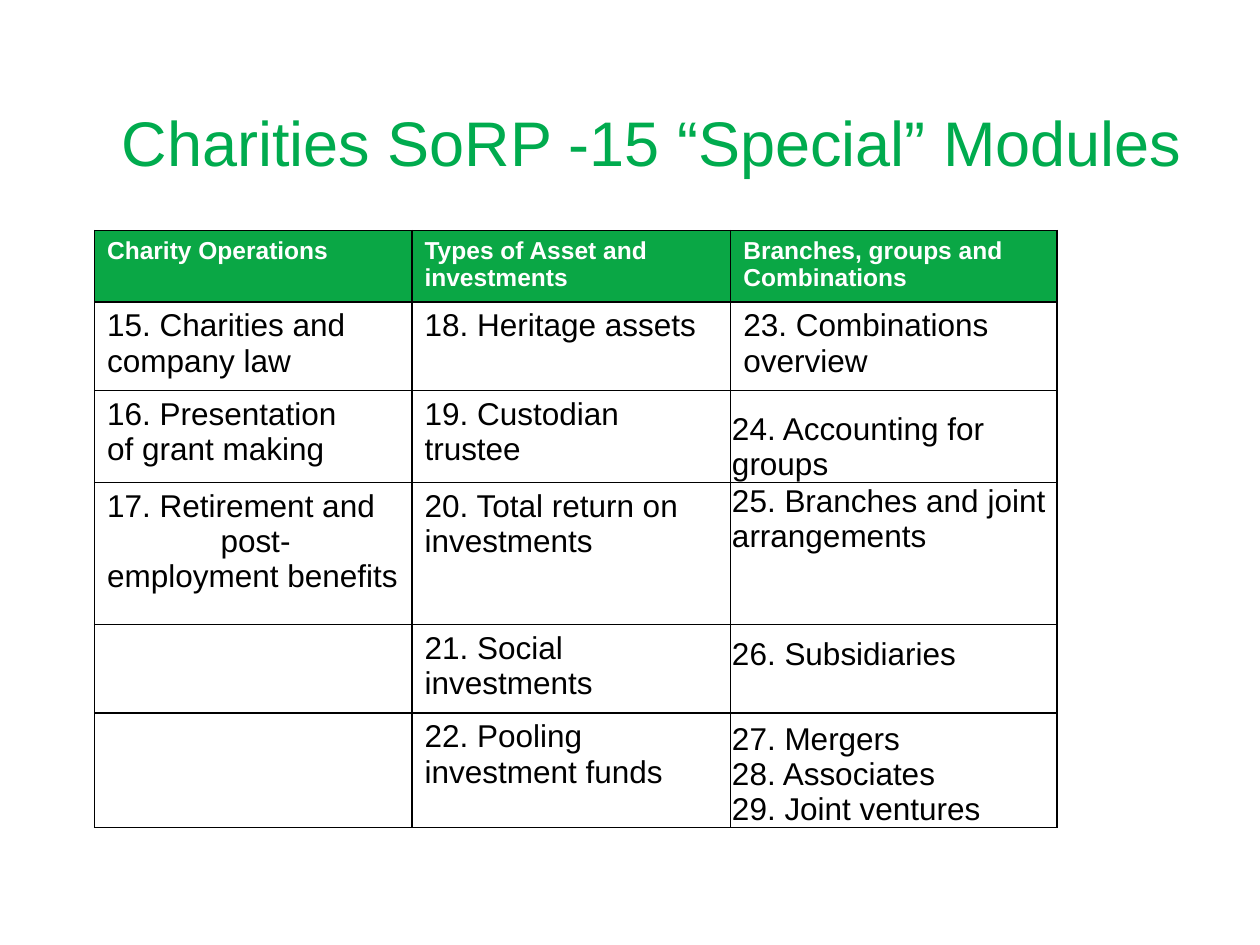
"""Build the slide on the special modules of the Charities SoRP."""
from dataclasses import dataclass

import lxml.etree
import pptx
import pptx.dml.color
import pptx.enum.text
import pptx.oxml.ns
import pptx.util

ANCHOR = pptx.enum.text.MSO_ANCHOR


@dataclass(frozen=True)
class Theme:
    font: str = "Arial"
    title_color: str = "00AB4E"
    header_fill: str = "0AA745"
    white: str = "FFFFFF"
    black: str = "000000"
    title_size: int = 36
    header_size: int = 14
    body_size: int = 18
    border_width: int = 1


@dataclass(frozen=True)
class Area:
    left: float
    top: float
    width: float
    height: float


@dataclass(frozen=True)
class Padding:
    side: float = 0.1
    top: float = 0.05
    bottom: float = 0.05


@dataclass(frozen=True)
class Module:
    text: str = ""
    padding: Padding = Padding()
    anchor: ANCHOR = ANCHOR.TOP
    indents: tuple[float, ...] = ()


THEME = Theme()
SLIDE_WIDTH, SLIDE_HEIGHT = pptx.util.Inches(10), pptx.util.Inches(7.5)
TITLE_AREA = Area(0.087, 0.041, 0.9, 0.216)
TABLE_AREA = Area(0.075, 0.244, 0.764, 0.612)
COLUMN_WIDTHS = (2.52, 2.53, 2.59)
ROW_HEIGHTS = (0.54, 0.68, 0.73, 1.13, 0.66, 0.85)
TIGHT = Padding(0.01, 0.01, 0)
LOWERED = Padding(0.01, 0.1, 0)

ROWS = (
    (Module("Charity Operations"), Module("Types of Asset and investments"),
     Module("Branches, groups and Combinations")),
    (Module("15. Charities and\ncompany law"), Module("18. Heritage assets"),
     Module("23. Combinations overview")),
    (Module("16. Presentation\nof grant making"), Module("19. Custodian trustee"),
     Module("24. Accounting for groups", TIGHT, ANCHOR.BOTTOM)),
    (Module("17. Retirement and\npost-\nemployment benefits", indents=(0, 0.9, 0)),
     Module("20. Total return on investments"),
     Module("25. Branches and joint arrangements", TIGHT)),
    (Module(), Module("21. Social investments"), Module("26. Subsidiaries", LOWERED)),
    (Module(), Module("22. Pooling investment funds"),
     Module("27. Mergers\n28. Associates\n29. Joint ventures", TIGHT, ANCHOR.BOTTOM)),
)


def placement(area: Area) -> tuple[int, int, int, int]:
    """Turn shares of the slide into lengths."""
    return (int(area.left * SLIDE_WIDTH), int(area.top * SLIDE_HEIGHT),
            int(area.width * SLIDE_WIDTH), int(area.height * SLIDE_HEIGHT))


def style_text(text_frame, size: int, color: str, bold: bool = False) -> None:
    """Format every run of a text frame."""
    for paragraph in text_frame.paragraphs:
        for run in paragraph.runs:
            run.font.name = THEME.font
            run.font.size = pptx.util.Pt(size)
            run.font.bold = bold
            run.font.color.rgb = pptx.dml.color.RGBColor.from_string(color)


def add_title(slide, text: str) -> None:
    """Add the slide heading."""
    shape = slide.shapes.add_textbox(*placement(TITLE_AREA))
    shape.text_frame.word_wrap = True
    shape.text_frame.vertical_anchor = ANCHOR.MIDDLE
    shape.text_frame.text = text
    style_text(shape.text_frame, THEME.title_size, THEME.title_color)


def add_borders(cell) -> None:
    """Draw a line on all four sides of a cell."""
    properties = cell._tc.get_or_add_tcPr()
    qualify = pptx.oxml.ns.qn
    for position, side in enumerate(("lnL", "lnR", "lnT", "lnB")):
        line = lxml.etree.Element(qualify(f"a:{side}"), w=str(pptx.util.Pt(THEME.border_width)))
        fill = lxml.etree.SubElement(line, qualify("a:solidFill"))
        lxml.etree.SubElement(fill, qualify("a:srgbClr"), val=THEME.black)
        properties.insert(position, line)


def fill_cell(cell, module: Module, is_header: bool) -> None:
    """Write and format one table cell."""
    cell.fill.solid()
    color = THEME.header_fill if is_header else THEME.white
    cell.fill.fore_color.rgb = pptx.dml.color.RGBColor.from_string(color)
    add_borders(cell)
    cell.margin_left = cell.margin_right = pptx.util.Inches(module.padding.side)
    cell.margin_top = pptx.util.Inches(module.padding.top)
    cell.margin_bottom = pptx.util.Inches(module.padding.bottom)
    cell.vertical_anchor = module.anchor
    cell.text_frame.text = module.text
    for paragraph, indent in zip(cell.text_frame.paragraphs, module.indents):
        paragraph._p.get_or_add_pPr().set("marL", str(pptx.util.Inches(indent)))
    if is_header:
        style_text(cell.text_frame, THEME.header_size, THEME.white, bold=True)
    else:
        style_text(cell.text_frame, THEME.body_size, THEME.black)


def add_module_table(slide) -> None:
    """Add the table of modules."""
    table = slide.shapes.add_table(len(ROWS), len(COLUMN_WIDTHS), *placement(TABLE_AREA)).table
    table.horz_banding = False
    for column, width in zip(table.columns, COLUMN_WIDTHS):
        column.width = pptx.util.Inches(width)
    for row_index, (row, height) in enumerate(zip(table.rows, ROW_HEIGHTS)):
        row.height = pptx.util.Inches(height)
        for cell, module in zip(row.cells, ROWS[row_index]):
            fill_cell(cell, module, is_header=row_index == 0)


def main() -> None:
    """Create and save the presentation."""
    presentation = pptx.Presentation()
    presentation.slide_width, presentation.slide_height = SLIDE_WIDTH, SLIDE_HEIGHT
    slide = presentation.slides.add_slide(presentation.slide_layouts[6])
    add_title(slide, "Charities SoRP -15 “Special” Modules")
    add_module_table(slide)
    presentation.save("out.pptx")


if __name__ == "__main__":
    main()
